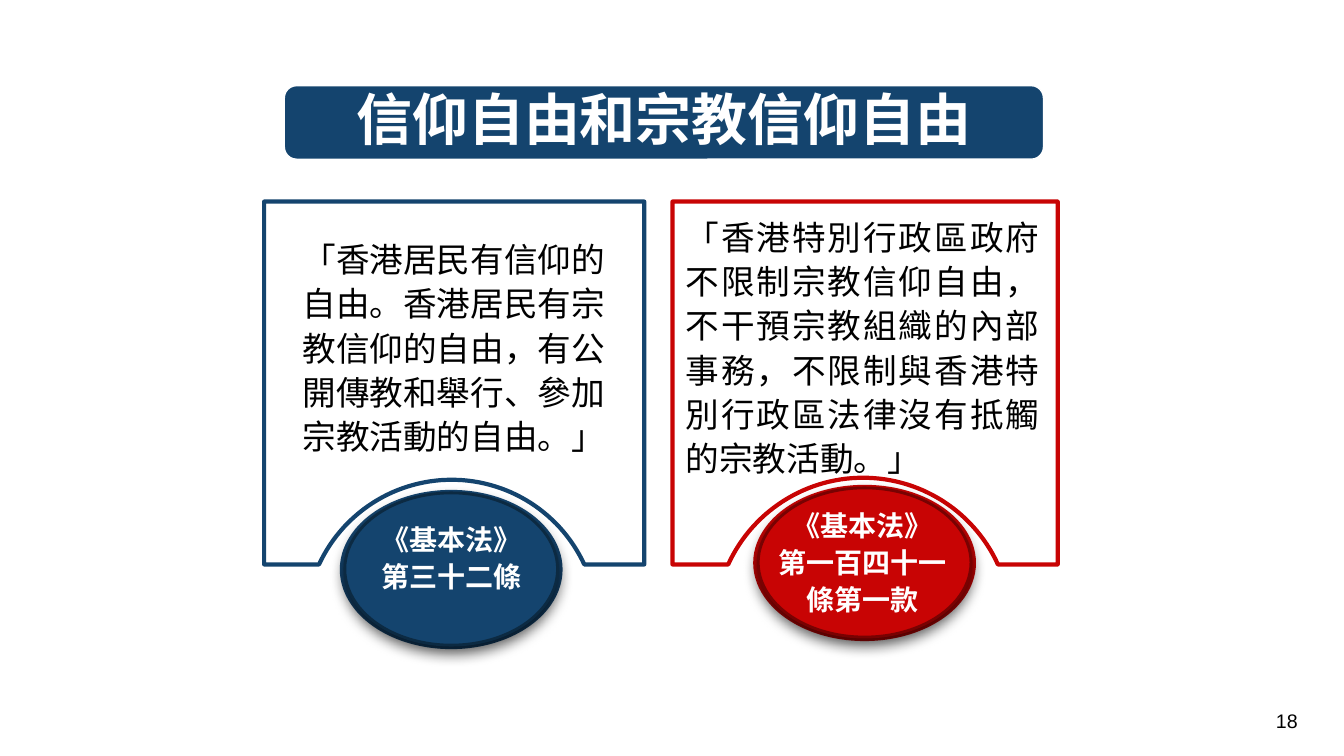
import math

import lxml.etree
import pptx
import pptx.dml.color
import pptx.enum.shapes
import pptx.enum.text
import pptx.oxml.ns
import pptx.util

Inches = pptx.util.Inches
Pt = pptx.util.Pt
RGBColor = pptx.dml.color.RGBColor
MSO_SHAPE = pptx.enum.shapes.MSO_SHAPE
PP_ALIGN = pptx.enum.text.PP_ALIGN
MSO_ANCHOR = pptx.enum.text.MSO_ANCHOR
qn = pptx.oxml.ns.qn

NAVY = RGBColor(0x14, 0x44, 0x6E)
DARK_NAVY = RGBColor(0x0C, 0x2A, 0x42)
RED = RGBColor(0xC8, 0x04, 0x04)
DARK_RED = RGBColor(0x78, 0x02, 0x02)
WHITE = RGBColor(0xFF, 0xFF, 0xFF)
BLACK = RGBColor(0, 0, 0)

FRAME_TOP, FRAME_BOTTOM, ARC_CENTRE_Y = 2, 5.6, 6.21
ARC_STEPS = 60


def write_text(shape, paragraphs, size, color, bold=False, align=None, spacing=1.1, inset=0):
    """Fill a shape with paragraphs, each a list of (text, font name) runs."""
    frame = shape.text_frame
    settings = {"word_wrap": True, "auto_size": pptx.enum.text.MSO_AUTO_SIZE.NONE,
                "margin_left": Inches(inset), "margin_right": Inches(inset),
                "margin_top": Inches(inset / 2), "margin_bottom": Inches(inset / 2)}
    for name, value in settings.items():
        setattr(frame, name, value)
    for index, runs in enumerate(paragraphs):
        paragraph = frame.add_paragraph() if index else frame.paragraphs[0]
        paragraph.alignment = align
        paragraph.line_spacing = spacing
        for text, font_name in runs:
            run = paragraph.add_run()
            run.text = text
            for name, value in {"name": font_name, "size": Pt(size), "bold": bold}.items():
                setattr(run.font, name, value)
            run.font.color.rgb = color
            east_asian = lxml.etree.Element(qn("a:ea"), typeface="Roboto")
            run.font._element.find(qn("a:latin")).addnext(east_asian)


def add_filled(kind, box, fill, line=None, line_width=1):
    shape = slide.shapes.add_shape(kind, *map(Inches, box))
    shape.shadow.inherit = False
    shape.fill.solid()
    shape.fill.fore_color.rgb = fill
    if line is None:
        shape.line.fill.background()
    else:
        shape.line.color.rgb = line
        shape.line.width = Pt(line_width)
    return shape


presentation = pptx.Presentation()
presentation.slide_width = Inches(13.33)
presentation.slide_height = Inches(7.5)
slide = presentation.slides.add_slide(presentation.slide_layouts[5])

# Title on its rounded banner
banner_box = (2.82, 0.85, 7.53, 0.73)
add_filled(MSO_SHAPE.ROUNDED_RECTANGLE, banner_box, NAVY, WHITE)
title = slide.shapes.title
title.left, title.top, title.width, title.height = map(Inches, banner_box)
write_text(title, [[("信仰自由和宗教信仰自由", "Roboto")]], 40, WHITE, True,
           PP_ALIGN.CENTER, 0.9, 0.06)
title.text_frame.vertical_anchor = MSO_ANCHOR.MIDDLE
slide.shapes._spTree.append(title._element)

articles = [
    {"color": NAVY, "edge": DARK_NAVY, "left": 2.62, "right": 6.39,
     "arc_centre": 4.48, "radius": 1.45, "oval": (3.37, 4.86, 2.21, 1.58),
     "quote": "「香港居民有信仰的自由。香港居民有宗教信仰的自由，有公開傳教和舉行、參加宗教活動的自由。」",
     "quote_box": (3, 2.33, 3.28, 2.19), "align": None,
     "label_box": (3.6, 5.15, 1.75, 0.71), "number": "三十二", "clause": "條"},
    {"color": RED, "edge": DARK_RED, "left": 6.67, "right": 10.49,
     "arc_centre": 8.56, "radius": 1.47, "oval": (7.47, 4.81, 2.21, 1.55),
     "quote": "「香港特別行政區政府不限制宗教信仰自由，不干預宗教組織的內部事務，"
              "不限制與香港特別行政區法律沒有抵觸的宗教活動。」",
     "quote_box": (6.8, 2.11, 3.51, 2.67), "align": PP_ALIGN.JUSTIFY,
     "label_box": (7.69, 5.01, 1.73, 1.11), "number": "一百四十一", "clause": "條第一款"},
]

for article in articles:
    # Frame with a circular notch in its lower side
    left, right, radius = article["left"], article["right"], article["radius"]
    start = math.asin((ARC_CENTRE_Y - FRAME_BOTTOM) / radius)
    points = [(right, FRAME_TOP), (right, FRAME_BOTTOM)]
    for step in range(ARC_STEPS + 1):
        angle = start + (math.pi - 2 * start) * step / ARC_STEPS
        points.append((article["arc_centre"] + radius * math.cos(angle),
                       ARC_CENTRE_Y - radius * math.sin(angle)))
    points.append((left, FRAME_BOTTOM))
    # Freeform points are whole numbers, so the outline is given in EMU
    builder = slide.shapes.build_freeform(Inches(left), Inches(FRAME_TOP))
    builder.add_line_segments([(Inches(x), Inches(y)) for x, y in points], close=True)
    notched_frame = builder.convert_to_shape()
    notched_frame.shadow.inherit = False
    notched_frame.fill.background()
    notched_frame.line.color.rgb = article["color"]
    notched_frame.line.width = Pt(3)

    # Ring and shaded oval
    ring = add_filled(MSO_SHAPE.DONUT, article["oval"], article["color"])
    ring.adjustments[0] = 0.049
    x, y, width, height = article["oval"]
    oval = add_filled(MSO_SHAPE.OVAL, (x + 0.05, y + 0.03, width - 0.1, height - 0.07),
                      article["color"], article["edge"], 2)
    effects = oval._element.spPr.find(qn("a:effectLst"))
    shadow = lxml.etree.SubElement(effects, qn("a:outerShdw"), blurRad=str(Pt(10)),
                                   dist=str(Pt(5)), dir="5400000", rotWithShape="0")
    shadow_color = lxml.etree.SubElement(shadow, qn("a:srgbClr"), val="000000")
    lxml.etree.SubElement(shadow_color, qn("a:alpha"), val="63000")

    quote = slide.shapes.add_textbox(*map(Inches, article["quote_box"]))
    write_text(quote, [[(article["quote"], "Roboto")]], 24, BLACK, align=article["align"])
    label = slide.shapes.add_textbox(*map(Inches, article["label_box"]))
    write_text(label, [[("《基本法》", "Roboto")],
                       [("第", "Roboto"), (article["number"], "Times New Roman"),
                        (article["clause"], "Roboto")]],
               20, WHITE, True, PP_ALIGN.CENTER)

page_number = slide.shapes.add_textbox(*map(Inches, (9.97, 6.98, 3, 0.4)))
write_text(page_number, [[("18", "Arial")]], 14, BLACK, align=PP_ALIGN.RIGHT,
           spacing=1, inset=0.1)

presentation.save("out.pptx")
